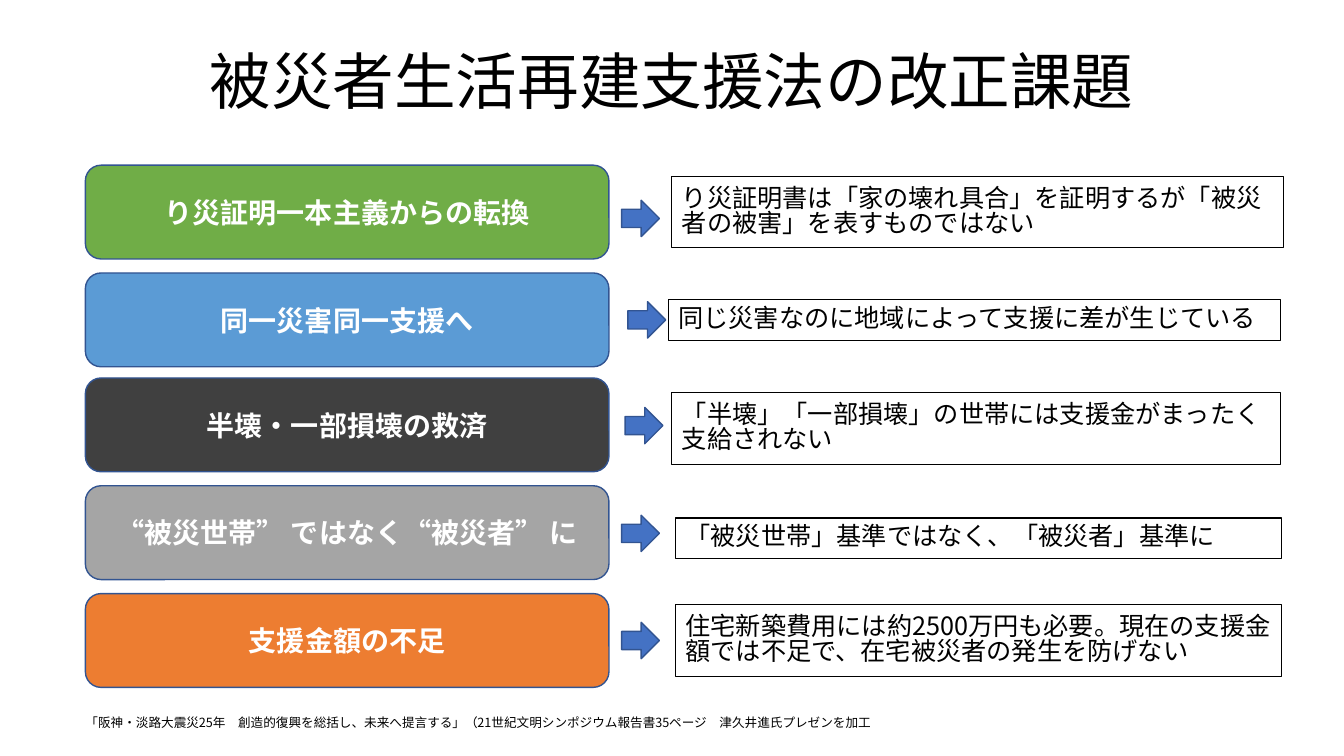
from lxml.etree import SubElement
from pptx import Presentation
from pptx.dml.color import RGBColor
from pptx.enum.shapes import MSO_SHAPE
from pptx.enum.text import MSO_ANCHOR, PP_ALIGN
from pptx.oxml.ns import qn
from pptx.util import Pt


def color(hex_code):
    return RGBColor.from_string(hex_code)


class SlideBuilder:
    font_name = "Noto Sans CJK JP"
    ink = "000000"
    outline = "325491"
    arrow_fill = "4472C4"

    def __init__(self, slide):
        self.shapes = slide.shapes

    def set_text(self, target, text, size, ink, align=PP_ALIGN.LEFT, bold=False, spacing=1.0):
        frame = target.text_frame
        frame.word_wrap = True
        frame.vertical_anchor = MSO_ANCHOR.MIDDLE
        paragraph = frame.paragraphs[0]
        paragraph.text = text
        paragraph.alignment = align
        paragraph.line_spacing = spacing
        font = paragraph.font
        font.size = Pt(size)
        font.bold = bold
        font.color.rgb = color(ink)
        font.name = self.font_name
        # East Asian characters take their typeface from a:ea
        defaults = paragraph._p.pPr.find(qn("a:defRPr"))
        SubElement(defaults, qn("a:ea"), typeface=self.font_name)

    def label(self, text, left, top, width, height, size, **style):
        box = self.shapes.add_textbox(Pt(left), Pt(top), Pt(width), Pt(height))
        self.set_text(box, text, size, self.ink, **style)
        return box

    def block(self, preset, left, top, width, height, fill):
        shape = self.shapes.add_shape(preset, Pt(left), Pt(top), Pt(width), Pt(height))
        shape.shadow.inherit = False
        shape.fill.solid()
        shape.fill.fore_color.rgb = color(fill)
        shape.line.color.rgb = color(self.outline)
        shape.line.width = Pt(1)
        return shape

    def issue(self, text, top, fill):
        card = self.block(MSO_SHAPE.ROUNDED_RECTANGLE, 61, top, 374, 67, fill)
        self.set_text(card, text, 20, "FFFFFF", align=PP_ALIGN.CENTER, bold=True)

    def arrow(self, left, top):
        self.block(MSO_SHAPE.RIGHT_ARROW, left, top, 27, 26, self.arrow_fill)

    def explanation(self, text, left, top, width, height):
        box = self.label(text, left, top, width, height, 18, spacing=0.84)
        box.line.color.rgb = color(self.ink)
        box.line.width = Pt(0.75)


# issue, top, fill, arrow (left, top), explanation, its (left, top, width, height)
ISSUES = [
    ("り災証明一本主義からの転換", 118, "70AD47", (444, 143),
     "り災証明書は「家の壊れ具合」を証明するが「被災者の被害」を表すものではない",
     (480, 126, 437, 51)),
    ("同一災害同一支援へ", 195, "5B9BD5", (448.5, 215.5),
     "同じ災害なのに地域によって支援に差が生じている",
     (477.5, 214, 437, 29)),
    ("半壊・一部損壊の救済", 270, "404040", (446.5, 291),
     "「半壊」「一部損壊」の世帯には支援金がまったく支給されない",
     (480, 280.5, 435, 51)),
    ("“被災世帯” ではなく“被災者” に", 347, "A5A5A5", (444, 368),
     "「被災世帯」基準ではなく、「被災者」基準に",
     (482.5, 370, 433, 29)),
    ("支援金額の不足", 424, "ED7D31", (444, 444.5),
     "住宅新築費用には約2500万円も必要。現在の支援金額では不足で、在宅被災者の発生を防げない",
     (482.5, 432, 433, 51)),
]

presentation = Presentation()
presentation.slide_width = Pt(960)
presentation.slide_height = Pt(540)
builder = SlideBuilder(presentation.slides.add_slide(presentation.slide_layouts[6]))

builder.label("被災者生活再建支援法の改正課題", 66, 26, 828, 69, 44,
              align=PP_ALIGN.CENTER, spacing=0.9)
for issue, top, fill, arrow_at, explanation, explanation_at in ISSUES:
    builder.issue(issue, top, fill)
    builder.arrow(*arrow_at)
    builder.explanation(explanation, *explanation_at)
builder.label("「阪神・淡路大震災25年　創造的復興を総括し、未来へ提言する」"
              "（21世紀文明シンポジウム報告書35ページ　津久井進氏プレゼンを加工",
              54, 507, 886, 18, 9)

presentation.save("out.pptx")
